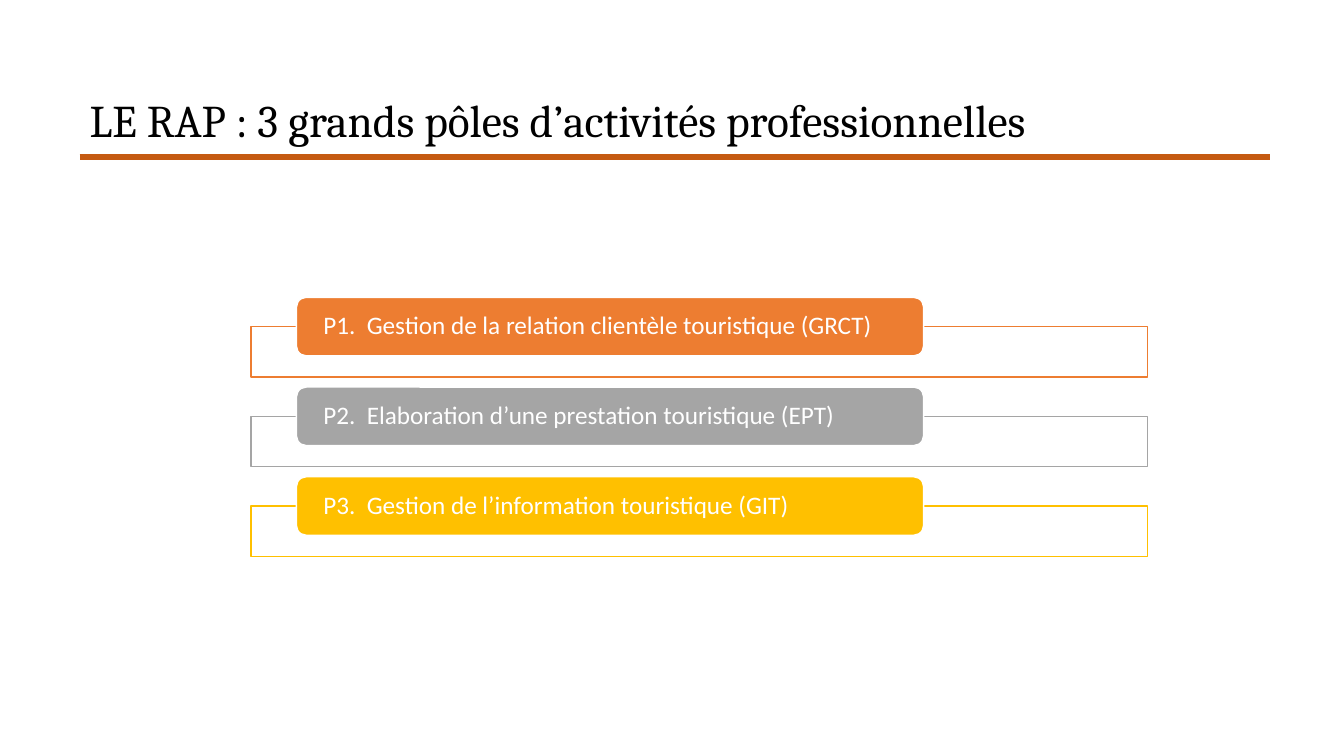
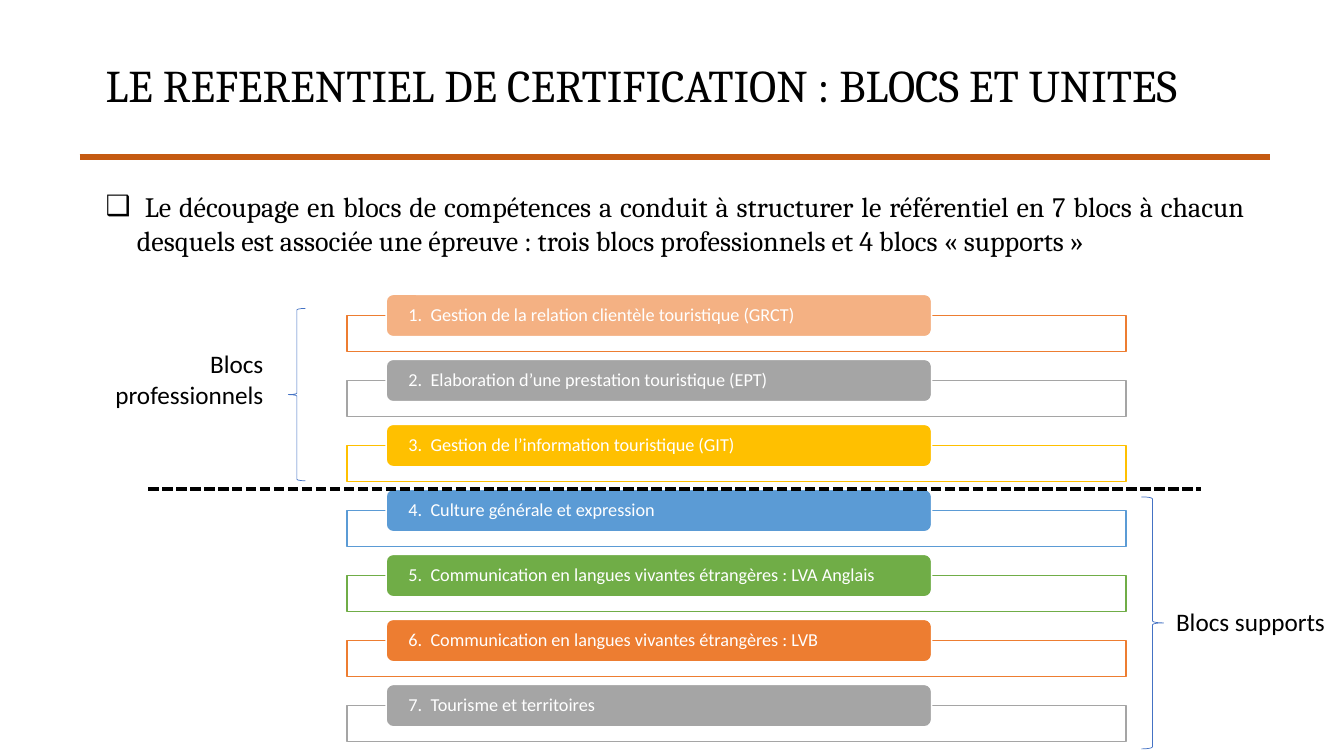
from lxml.etree import SubElement
from pptx import Presentation
from pptx.dml.color import RGBColor
from pptx.enum.dml import MSO_LINE
from pptx.enum.shapes import MSO_CONNECTOR, MSO_SHAPE
from pptx.enum.text import MSO_ANCHOR, PP_ALIGN
from pptx.oxml.ns import qn
from pptx.util import Inches, Pt

DASH = MSO_LINE.SQUARE_DOT
LINE = MSO_CONNECTOR.STRAIGHT
RECT, PILL = MSO_SHAPE.RECTANGLE, MSO_SHAPE.ROUNDED_RECTANGLE
OPEN, CLOSE = MSO_SHAPE.LEFT_BRACE, MSO_SHAPE.RIGHT_BRACE
TOP, MID = MSO_ANCHOR.TOP, MSO_ANCHOR.MIDDLE
LEFT, RIGHT, FULL = PP_ALIGN.LEFT, PP_ALIGN.RIGHT, PP_ALIGN.JUSTIFY

HEAD, BODY = "Cambria", "Calibri"
HEX = {
    "ink": "000000", "white": "FFFFFF", "rule": "C55A11", "brace": "4472C4",
    "orange": "ED7D31", "peach": "F4B183", "grey": "A5A5A5",
    "gold": "FFC000", "blue": "5B9BD5", "green": "70AD47",
}

POLES = [
    ("P1.", "Gestion de la relation clientèle touristique (GRCT)", "orange", "orange"),
    ("P2.", "Elaboration d’une prestation touristique (EPT)", "grey", "grey"),
    ("P3.", "Gestion de l’information touristique (GIT)", "gold", "gold"),
]
BLOCKS = [
    ("1.", POLES[0][1], "peach", "orange"),
    ("2.", POLES[1][1], "grey", "grey"),
    ("3.", POLES[2][1], "gold", "gold"),
    ("4.", "Culture générale et expression", "blue", "blue"),
    ("5.", "Communication en langues vivantes étrangères : LVA Anglais", "green", "green"),
    ("6.", "Communication en langues vivantes étrangères : LVB", "orange", "orange"),
    ("7.", "Tourisme et territoires", "grey", "grey"),
]
INTRO = (" Le découpage en blocs de compétences a conduit à structurer le référentiel"
         " en 7 blocs à chacun desquels est associée une épreuve : trois blocs"
         " professionnels et 4 blocs «\u00a0supports\u00a0»")


def color(name):
    """Return the named colour."""
    return RGBColor.from_string(HEX[name])


def write(shape, text, size=18, font=BODY, ink="ink", align=LEFT, anchor=TOP,
          pad=(0.1, 0.05), hang=0, bullet=None, space=1.0):
    """Fill a shape with one formatted paragraph."""
    frame = shape.text_frame
    frame.word_wrap = True
    frame.vertical_anchor = anchor
    frame.margin_left = frame.margin_right = Inches(pad[0])
    frame.margin_top = frame.margin_bottom = Inches(pad[1])
    para = frame.paragraphs[0]
    para.alignment, para.line_spacing = align, space
    run = para.add_run()
    run.text = text
    run.font.size, run.font.name = Pt(size), font
    run.font.color.rgb = color(ink)
    props = para._p.get_or_add_pPr()
    if hang:
        props.set("marL", str(Inches(hang)))
        props.set("indent", str(-Inches(hang)))
    if bullet:
        SubElement(props, qn("a:buFont")).set("typeface", "Arial")
        SubElement(props, qn("a:buChar")).set("char", bullet)


def label(slide, box, text, **form):
    """Add a text box."""
    write(slide.shapes.add_textbox(*map(Inches, box)), text, **form)


def draw(slide, kind, box, fill, edge, width=1.0):
    """Add a preset shape."""
    shape = slide.shapes.add_shape(kind, *map(Inches, box))
    shape.shadow.inherit = False
    if fill:
        shape.fill.solid()
        shape.fill.fore_color.rgb = color(fill)
    else:
        shape.fill.background()
    shape.line.color.rgb = color(edge)
    shape.line.width = Pt(width)
    return shape


def rule(slide, left, top, width, ink, weight, dash=None):
    """Add a level line."""
    line = slide.shapes.add_connector(
        LINE, *map(Inches, (left, top, left + width, top)))
    line.line.color.rgb = color(ink)
    line.line.width = Pt(weight)
    if dash:
        line.line.dash_style = dash
    SubElement(line._element.spPr, qn("a:effectLst"))


def header(slide, text, left, top):
    """Place the title and the rule beneath it."""
    label(slide, (left, top, 11.81, 0.6), text, size=32.4, font=HEAD,
          anchor=MID, space=0.9)
    rule(slide, 0.79, 1.56, 11.81, "rule", 4.5)


def stack(slide, items, box, pitch, high, pill, size, pad, hang):
    """Place evenly spaced frames, each with a pill over its top edge."""
    left, top, width, tall = box
    shift, wide = pill
    for row, (mark, text, fill, edge) in enumerate(items):
        y = top + row * pitch
        draw(slide, RECT, (left, y + tall / 2, width, high), "white", edge)
        tab = draw(slide, PILL, (left + shift, y, wide, tall), fill, "white")
        write(tab, f"{mark}\t{text}", size=size, ink="white", anchor=MID,
              pad=(pad, 0), hang=hang, space=0.9)


def poles(slide):
    """Build the slide of professional poles."""
    header(slide, "LE RAP : 3 grands pôles d’activités professionnelles", 0.79, 0.92)
    stack(slide, POLES, (2.49, 2.95, 8.89, 0.58), 0.89, 0.5, (0.45, 6.22),
          18, 0.24, 0.43)


def blocks(slide):
    """Build the slide of blocks and units."""
    header(slide, "LE REFERENTIEL DE CERTIFICATION : BLOCS ET UNITES", 0.95, 0.57)
    label(slide, (0.95, 1.83, 11.5, 0.8), INTRO, size=20, font=HEAD,
          align=FULL, hang=0.31, bullet="❑")
    stack(slide, BLOCKS, (3.44, 2.92, 7.73, 0.42), 0.645, 0.36, (0.39, 5.41),
          13, 0.2, 0.22)
    rule(slide, 1.47, 4.85, 10.44, "ink", 2.5, DASH)
    draw(slide, OPEN, (2.86, 3.06, 0.17, 1.71), None, "brace", 0.5)
    label(slide, (0.59, 3.41, 2.12, 0.71), "Blocs professionnels", align=RIGHT)
    draw(slide, CLOSE, (11.32, 4.93, 0.22, 2.5), None, "brace", 0.5)
    label(slide, (11.54, 5.97, 1.7, 0.4), "Blocs supports", align=RIGHT)


def main():
    """Build and save the deck."""
    deck = Presentation()
    deck.slide_width, deck.slide_height = Inches(13.33), Inches(7.5)
    for build in (poles, blocks):
        build(deck.slides.add_slide(deck.slide_layouts[6]))
    deck.save("out.pptx")


if __name__ == "__main__":
    main()
